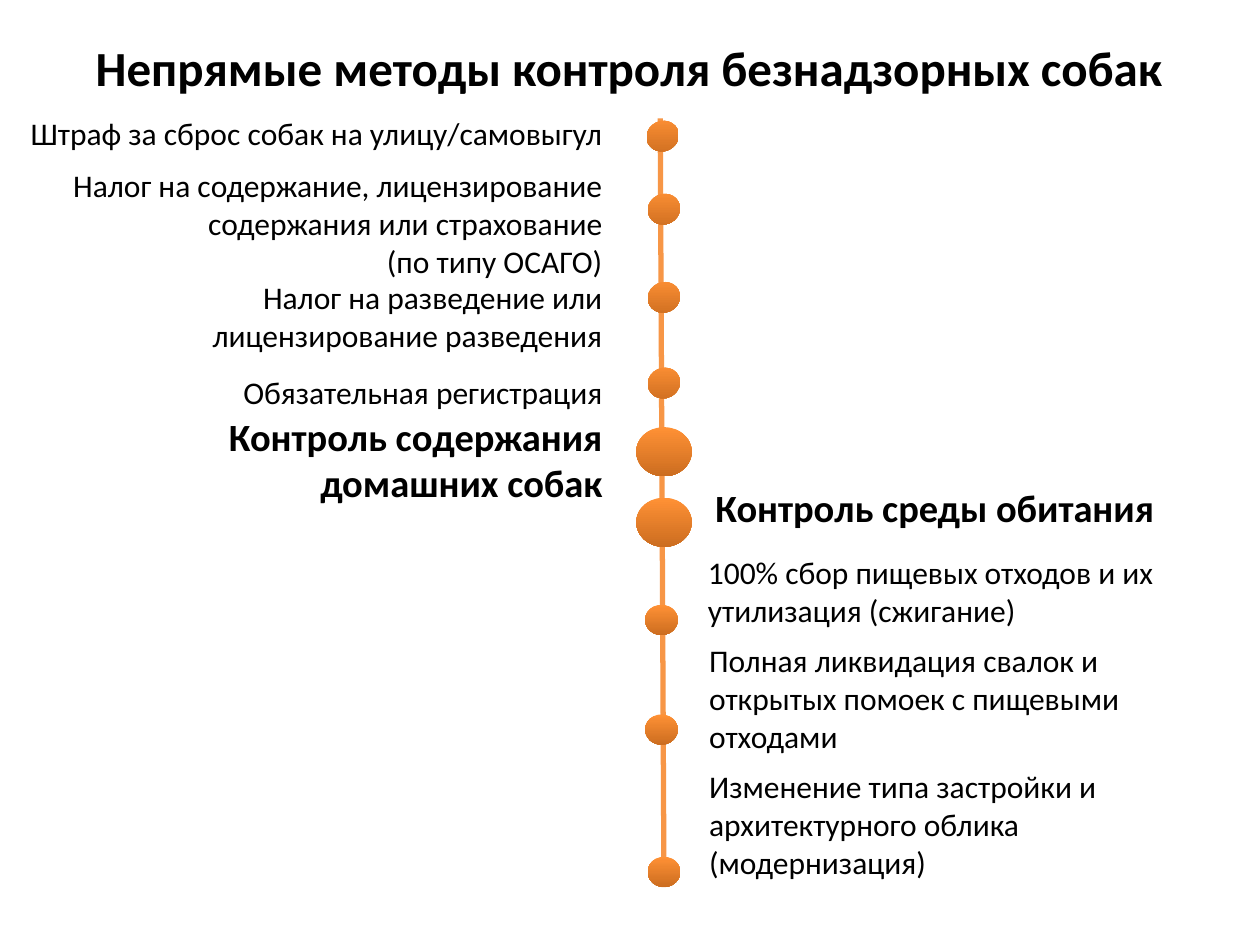
import pptx
import pptx.dml.color
import pptx.enum.shapes
import pptx.enum.text
import pptx.oxml.ns
import pptx.util
from lxml import etree

Inches = pptx.util.Inches
ALIGN = pptx.enum.text.PP_ALIGN
AUTO_SIZE = pptx.enum.text.MSO_AUTO_SIZE

COLORS = {
    "text": "000000",
    "axis": "F79646",
    "dot_top": "FF9135",
    "dot_bottom": "CC6D20",
}
FONT = "Calibri"
HEADING = {"size": 22, "bold": True}
LEFT_EDGE = 4.88  # shared right edge of the texts left of the axis

# Left-hand texts: top, width, height, paragraphs, format
LEFT_TEXTS = [
    (0.86, 5.16, 0.4, ["Штраф за сброс собак на улицу/самовыгул"], {}),
    (1.27, 5, 1, ["Налог на содержание, лицензирование содержания или страхование",
                  "(по типу ОСАГО)"], {"indent": 0.5}),
    (2.16, 5, 0.7, ["Налог на разведение или лицензирование разведения"], {"indent": 0.5}),
    (2.91, 3.27, 0.4, ["Обязательная регистрация"], {}),
    (3.23, 3.62, 0.83, ["Контроль содержания домашних собак"], HEADING),
]

# Right-hand texts: left, top, width, height, paragraphs, format
RIGHT_TEXTS = [
    (5.58, 3.79, 3.71, 0.47, ["Контроль среды обитания"], HEADING),
    (5.52, 4.34, 3.76, 0.7, ["100% сбор пищевых отходов и их утилизация (сжигание)"], {}),
    (5.53, 5.04, 3.75, 1, ["Полная ликвидация свалок и открытых помоек с пищевыми отходами"], {}),
    (5.53, 6.04, 3.87, 1, ["Изменение типа застройки и архитектурного облика (модернизация)"], {}),
]

# Dots on the axis: left, top
LARGE_DOTS = [(5.05, 3.39), (5.05, 3.95)]
SMALL_DOTS = [(5.12, 4.8), (5.12, 5.67), (5.14, 6.8)]
TILTED_DOTS = [(5.13, 0.96), (5.14, 1.54), (5.14, 2.24), (5.14, 2.92)]


def rgb(name):
    return pptx.dml.color.RGBColor.from_string(COLORS[name])


def write_text(text_frame, paragraphs, size=18, bold=False, align=ALIGN.LEFT, indent=0,
               auto_size=AUTO_SIZE.SHAPE_TO_FIT_TEXT):
    text_frame.word_wrap = True
    text_frame.auto_size = auto_size
    text_frame.vertical_anchor = pptx.enum.text.MSO_ANCHOR.TOP
    for index, text in enumerate(paragraphs):
        paragraph = text_frame.paragraphs[0] if index == 0 else text_frame.add_paragraph()
        paragraph.alignment = align
        if indent:
            paragraph._p.get_or_add_pPr().set("marL", str(Inches(indent)))
        run = paragraph.add_run()
        run.text = text
        run.font.name = FONT
        run.font.size = pptx.util.Pt(size)
        run.font.bold = bold
        run.font.color.rgb = rgb("text")


def add_title(slide, text):
    title = slide.shapes.title
    title.left, title.top = Inches(0.24), Inches(0.25)
    title.width, title.height = Inches(9.5), Inches(1.25)
    write_text(title.text_frame, [text], size=28, bold=True, align=ALIGN.CENTER,
               auto_size=AUTO_SIZE.NONE)


def add_text(slide, left, top, width, height, paragraphs, **text_format):
    """Add text in an unfilled rectangular outline."""
    start_x, start_y = Inches(left), Inches(top)
    end_x, end_y = Inches(left + width), Inches(top + height)
    builder = slide.shapes.build_freeform(start_x, start_y)
    builder.add_line_segments([(end_x, start_y), (end_x, end_y), (start_x, end_y)], close=True)
    shape = builder.convert_to_shape()
    shape.shadow.inherit = False
    shape.fill.background()
    shape.line.fill.background()
    write_text(shape.text_frame, paragraphs, **text_format)


def add_axis(slide):
    axis = slide.shapes.add_connector(
        pptx.enum.shapes.MSO_CONNECTOR.STRAIGHT,
        Inches(5.27), Inches(7.04), Inches(5.24), Inches(0.94))
    axis.line.color.rgb = rgb("axis")
    axis.line.width = pptx.util.Pt(3)
    etree.SubElement(axis._element.spPr, pptx.oxml.ns.qn("a:effectLst"))


def add_dot(slide, left, top, width=0.26, height=0.24, rotation=0):
    dot = slide.shapes.add_shape(
        pptx.enum.shapes.MSO_SHAPE.OVAL,
        Inches(left), Inches(top), Inches(width), Inches(height))
    dot.rotation = rotation
    dot.shadow.inherit = False
    dot.line.fill.background()
    dot.fill.gradient()
    # Counter-clockwise angle that keeps the gradient vertical when tilted
    dot.fill.gradient_angle = (270 + rotation) % 360
    for stop, position, color in zip(dot.fill.gradient_stops, (0, 1), ("dot_top", "dot_bottom")):
        stop.position = position
        stop.color.rgb = rgb(color)


def main():
    presentation = pptx.Presentation()
    presentation.slide_width, presentation.slide_height = Inches(10), Inches(7.5)
    slide = presentation.slides.add_slide(presentation.slide_layouts.get_by_name("Title Only"))

    # Title and texts
    add_title(slide, "Непрямые методы контроля безнадзорных собак")
    for top, width, height, paragraphs, text_format in LEFT_TEXTS:
        add_text(slide, LEFT_EDGE - width, top, width, height, paragraphs,
                 align=ALIGN.RIGHT, **text_format)
    for left, top, width, height, paragraphs, text_format in RIGHT_TEXTS:
        add_text(slide, left, top, width, height, paragraphs, **text_format)

    # Axis with its dots
    add_axis(slide)
    for left, top in LARGE_DOTS:
        add_dot(slide, left, top, width=0.44, height=0.39)
    for left, top in SMALL_DOTS:
        add_dot(slide, left, top)
    for left, top in TILTED_DOTS:
        add_dot(slide, left, top, rotation=334)

    presentation.save("out.pptx")


if __name__ == "__main__":
    main()
